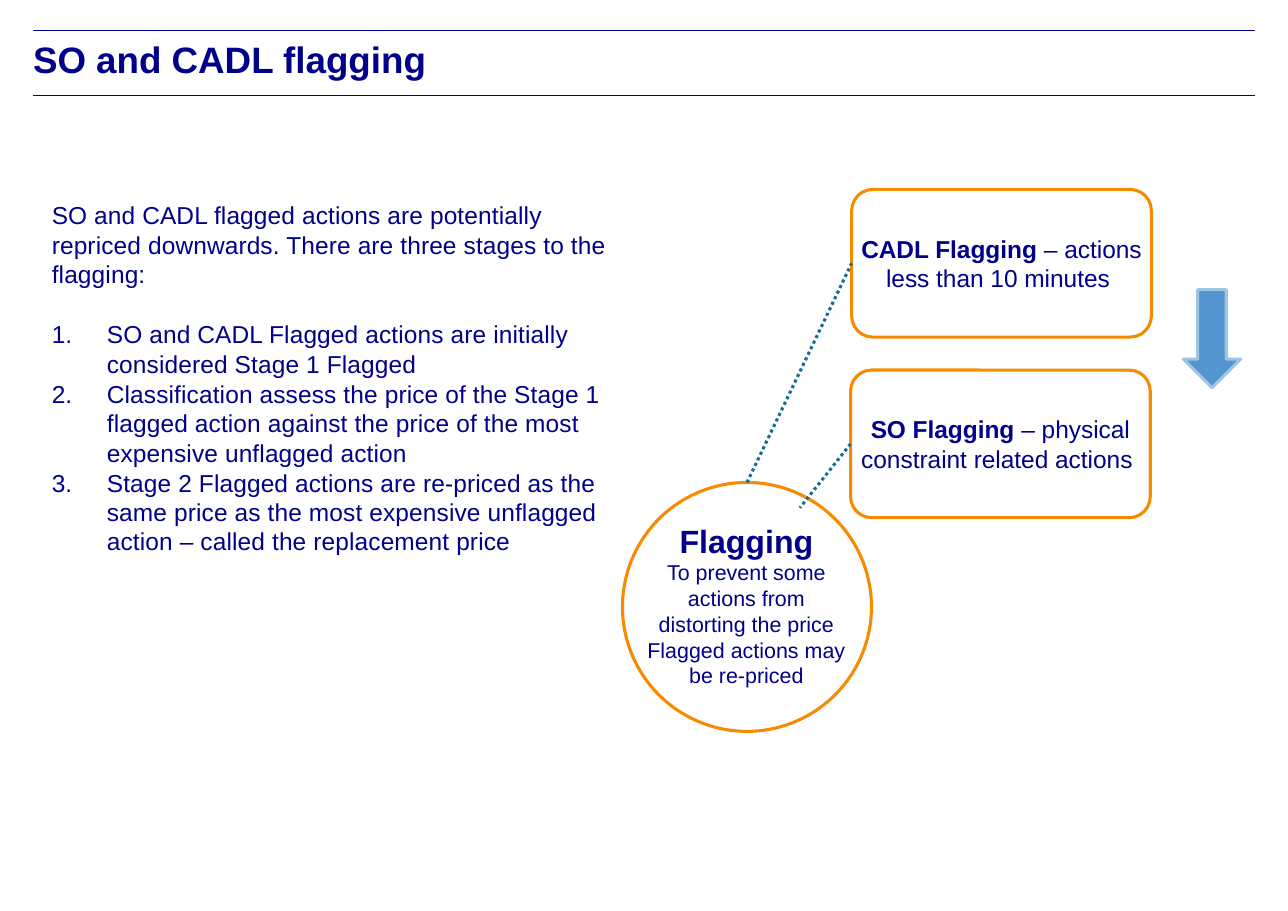
from dataclasses import dataclass
from lxml.etree import SubElement as Sub
from pptx import Presentation
from pptx.dml.color import RGBColor as Rgb
from pptx.enum.dml import MSO_LINE as Dash
from pptx.enum.shapes import MSO_CONNECTOR as Link, MSO_SHAPE as Shape
from pptx.enum.text import MSO_ANCHOR as Anchor, MSO_AUTO_SIZE as Fit, PP_ALIGN as Align
from pptx.oxml.ns import qn
from pptx.util import Inches, Pt


# Colours and type sizes
@dataclass(frozen=True)
class Theme:
    font: str = "Arial"
    navy: str = "00008B"
    orange: str = "F68B00"
    teal: str = "156E91"
    blue: str = "5495D0"
    pale: str = "A0C4E5"
    white: str = "FFFFFF"
    title: int = 24
    head: int = 21
    text: int = 16
    note: int = 14


THEME = Theme()

INTRO = ("SO and CADL flagged actions are potentially repriced downwards. "
         "There are three stages to the flagging:")
STAGES = [
    "SO and CADL Flagged actions are initially considered Stage 1 Flagged",
    "Classification assess the price of the Stage 1 flagged action against "
    "the price of the most expensive unflagged action",
    "Stage 2 Flagged actions are re-priced as the same price as the most "
    "expensive unflagged action – called the replacement price",
]
# Left, top, bold lead and rest of each flag box
FLAGS = [
    (7.73, 1.72, "CADL Flagging ", "– actions less than 10 minutes "),
    (7.72, 3.36, "SO Flagging", " – physical constraint related actions "),
]


def write(para, text, size=THEME.text, bold=False, align=Align.LEFT,
          before=0, track=0):
    """Add one run of text to a paragraph and format both."""
    para.alignment = align
    para.space_before = Pt(before)
    run = para.add_run()
    run.text = text
    font = run.font
    font.name, font.size, font.bold = THEME.font, Pt(size), bold
    font.color.rgb = Rgb.from_string(THEME.navy)
    if track:
        run._r.get_or_add_rPr().set("spc", str(track))


def mark(para, indent=0):
    """Number a paragraph with a hanging indent, or clear its bullet."""
    props = para._p.get_or_add_pPr()
    props.set("marL", str(Inches(indent)))
    props.set("indent", str(Inches(-indent)))
    if indent:
        Sub(props, qn("a:buFont"), typeface=THEME.font)
        Sub(props, qn("a:buAutoNum"), type="arabicPeriod")
    else:
        Sub(props, qn("a:buNone"))


def place(shape, left, top, width, height):
    shape.left, shape.top = Inches(left), Inches(top)
    shape.width, shape.height = Inches(width), Inches(height)


def frame(shape, anchor=Anchor.TOP):
    """Give a text frame no margins, and return it."""
    area = shape.text_frame
    area.word_wrap, area.auto_size = True, Fit.NONE
    area.vertical_anchor = anchor
    area.margin_left = area.margin_right = 0
    area.margin_top = area.margin_bottom = 0
    return area


def label(slide, *spot, anchor=Anchor.TOP):
    return frame(slide.shapes.add_textbox(*map(Inches, spot)), anchor)


def draw(slide, kind, *spot, line, fill=None):
    shape = slide.shapes.add_shape(kind, *map(Inches, spot))
    shape.shadow.inherit = False
    if fill:
        shape.fill.solid()
        shape.fill.fore_color.rgb = Rgb.from_string(fill)
    else:
        shape.fill.background()
    shape.line.color.rgb = Rgb.from_string(line)
    shape.line.width = Pt(2)
    return shape


def rule(slide, *ends, color, width, dash=None):
    line = slide.shapes.add_connector(Link.STRAIGHT, *map(Inches, ends))
    line.line.color.rgb = Rgb.from_string(color)
    line.line.width = Pt(width)
    if dash:
        line.line.dash_style = dash
    Sub(line._element.spPr, qn("a:effectLst"))


def header(slide):
    for y in (0.28, 0.87):
        rule(slide, 0.3, y, 11.39, y, color=THEME.navy, width=0.5)
    title = slide.shapes.title
    place(title, 0.3, 0.33, 11.08, 0.54)
    write(frame(title).paragraphs[0], "SO and CADL flagging",
          size=THEME.title, bold=True)


def stages(slide):
    body = slide.placeholders[1]
    place(body, 0.47, 1.82, 5.22, 5.93)
    area = frame(body)
    mark(area.paragraphs[0])
    write(area.paragraphs[0], INTRO, track=10)
    for num, text in enumerate(STAGES):
        para = area.add_paragraph()
        mark(para, indent=0.5)
        write(para, text, before=0.6 if num else 20, track=10)


def circle(slide):
    draw(slide, Shape.OVAL, 5.65, 4.38, 2.26, 2.26, line=THEME.orange)
    area = label(slide, 5.84, 4.73, 1.87, 1.53)
    write(area.paragraphs[0], "Flagging", size=THEME.head, bold=True,
          align=Align.CENTER)
    for text in ("To prevent some actions from distorting the price",
                 "Flagged actions may be re-priced"):
        write(area.add_paragraph(), text, size=THEME.note, align=Align.CENTER)


def flag(slide, left, top, lead, rest):
    box = draw(slide, Shape.ROUNDED_RECTANGLE, left, top, 2.72, 1.34,
               line=THEME.orange, fill=THEME.white)
    box.adjustments[0] = 0.143
    area = label(slide, left + 0.08, top + 0.09, 2.56, 1.16,
                 anchor=Anchor.MIDDLE)
    write(area.paragraphs[0], lead, bold=True, align=Align.CENTER)
    write(area.paragraphs[0], rest, align=Align.CENTER)


def main():
    deck = Presentation()
    deck.slide_width, deck.slide_height = Inches(11.69), Inches(8.27)
    slide = deck.slides.add_slide(deck.slide_layouts[1])

    # Title and numbered stages
    header(slide)
    stages(slide)

    # Flagging circle and its two boxes
    circle(slide)
    for item in FLAGS:
        flag(slide, *item)

    # Dotted links and the down arrow
    for ends in ((6.78, 4.38, 7.73, 2.39), (7.72, 4.03, 7.26, 4.61)):
        rule(slide, *ends, color=THEME.teal, width=2, dash=Dash.ROUND_DOT)
    draw(slide, Shape.DOWN_ARROW, 10.74, 2.63, 0.52, 0.89,
         line=THEME.pale, fill=THEME.blue)

    deck.save("out.pptx")


if __name__ == "__main__":
    main()
